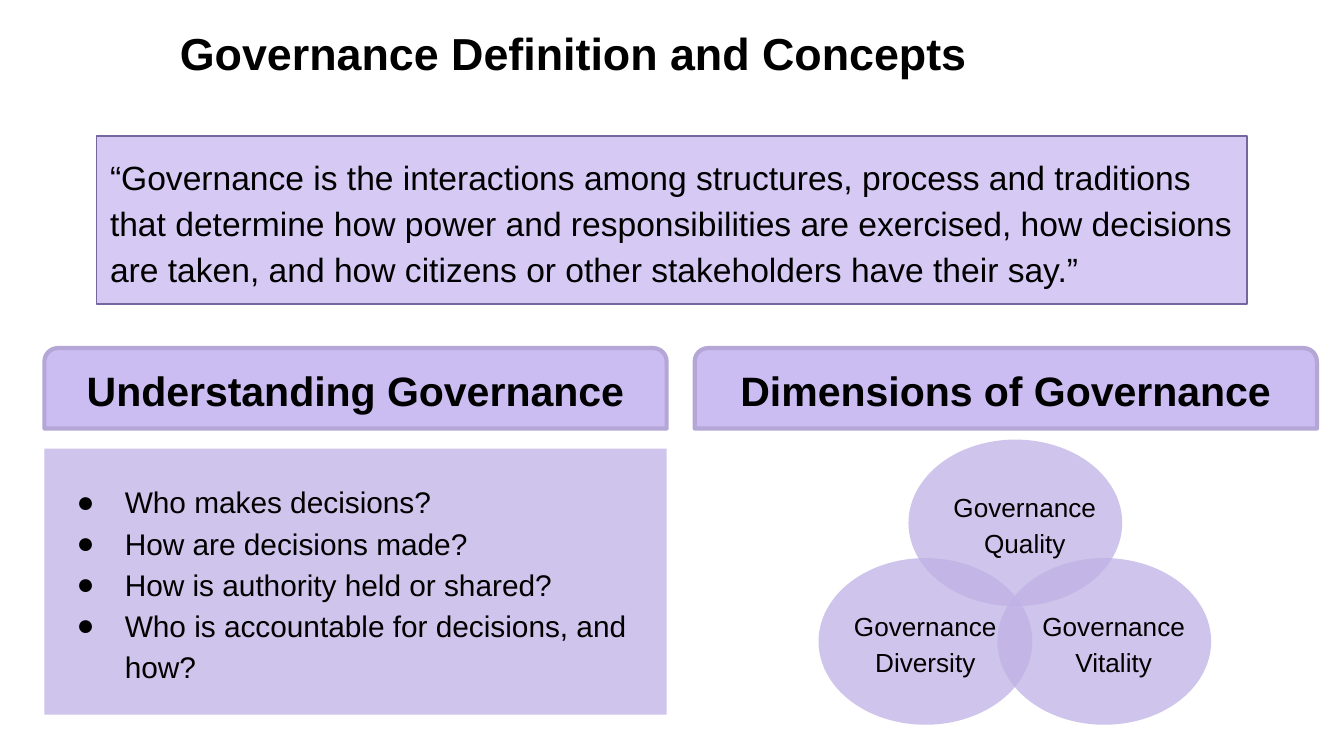
from lxml.etree import SubElement
from pptx import Presentation
from pptx.dml.color import RGBColor
from pptx.enum.shapes import MSO_SHAPE as Shape
from pptx.enum.text import MSO_ANCHOR as Anchor, PP_ALIGN as Align
from pptx.oxml.ns import qn
from pptx.util import Cm, Pt

FONT = "Arial"
BLACK = "000000"
LILAC = "C0B2E5"
MARGIN = 0.84
COLUMN_WIDTH = 11.76
RIGHT_COLUMN = 13.13
QUESTIONS = [
    "Who makes decisions?",
    "How are decisions made?",
    "How is authority held or shared?",
    "Who is accountable for decisions, and how?",
]
# left, top, text, left indent of the text
DIMENSIONS = [
    (17.17, 8.31, "Governance\vQuality", 0.36),
    (18.85, 10.55, "Governance\vVitality", 0.36),
    (15.47, 10.55, "Governance\vDiversity", 0),
]


def color(hex_string):
    return RGBColor.from_string(hex_string)


def paint(shape, fill, opacity=100, line=None, line_width=0):
    shape.shadow.inherit = False
    shape.fill.solid()
    shape.fill.fore_color.rgb = color(fill)
    if opacity < 100:
        tint = shape.fill._xPr.find(qn("a:solidFill"))[0]
        SubElement(tint, qn("a:alpha"), val=str(opacity * 1000))
    if line:
        shape.line.color.rgb = color(line)
        shape.line.width = Pt(line_width)
    else:
        shape.line.fill.background()


def write(shape, lines, size, bold=False, align=Align.LEFT, spacing=1.0,
          wrap=True, indent=0, hanging=0, bullet=None):
    """Fill the shape with one paragraph per line."""
    frame = shape.text_frame
    frame.word_wrap = wrap
    frame.vertical_anchor = Anchor.MIDDLE
    frame.margin_left = frame.margin_right = Cm(0.25)
    frame.margin_top = frame.margin_bottom = Cm(0.25)
    for number, line in enumerate(lines):
        para = frame.add_paragraph() if number else frame.paragraphs[0]
        para.text = line
        para.alignment = align
        para.line_spacing = spacing
        props = para._p.get_or_add_pPr()
        if indent:
            props.set("marL", str(Cm(indent)))
            props.set("indent", str(-Cm(hanging)))
        if bullet:
            tint = SubElement(props, qn("a:buClr"))
            SubElement(tint, qn("a:srgbClr"), val=BLACK)
            SubElement(props, qn("a:buFont"), typeface=FONT)
            SubElement(props, qn("a:buChar"), char=bullet)
        for span in para.runs:
            span.font.name = FONT
            span.font.size = Pt(size)
            span.font.bold = bold
            span.font.color.rgb = color(BLACK)


def add_block(page, kind, left, top, width, height):
    return page.shapes.add_shape(kind, Cm(left), Cm(top), Cm(width), Cm(height))


def add_title(page, text):
    box = page.shapes.add_textbox(Cm(3.15), Cm(0.36), Cm(22.35), Cm(1.27))
    paint(box, "FFFFFF", 55)
    write(box, [text], 24, bold=True)


def add_quote(page, text):
    box = add_block(page, Shape.RECTANGLE, 1.83, 2.57, 21.74, 3.18)
    paint(box, "CCBDF3", 80, "75679D", 0.75)
    write(box, [text], 18, spacing=1.15)


def add_heading(page, left, text):
    tab = add_block(page, Shape.ROUND_2_SAME_RECTANGLE,
                    left, 6.58, COLUMN_WIDTH, 1.52)
    paint(tab, "CBBCF2", line="B4A7D6", line_width=2.25)
    write(tab, [text], 22, bold=True, align=Align.CENTER)


def add_questions(page):
    box = add_block(page, Shape.RECTANGLE, MARGIN, 8.48, COLUMN_WIDTH, 5.03)
    paint(box, LILAC, 76)
    write(box, QUESTIONS, 16, spacing=1.15, indent=1.27, hanging=0.91, bullet="●")


def add_dimension(page, left, top, text, indent):
    oval = add_block(page, Shape.OVAL, left, top, 4.04, 3.15)
    paint(oval, LILAC, 76)
    write(oval, [text], 14, align=Align.CENTER, spacing=1.15,
          wrap=False, indent=indent)


def main():
    deck = Presentation()
    deck.slide_width, deck.slide_height = Cm(25.4), Cm(14.29)
    page = deck.slides.add_slide(deck.slide_layouts[6])
    add_questions(page)
    add_heading(page, MARGIN, "Understanding Governance")
    add_quote(page, "“Governance is the interactions among structures, process "
                    "and traditions that determine how power and "
                    "responsibilities are exercised, how decisions are taken, "
                    "and how citizens or other stakeholders have their say.”")
    add_heading(page, RIGHT_COLUMN, "Dimensions of Governance")
    for dimension in DIMENSIONS:
        add_dimension(page, *dimension)
    add_title(page, "Governance Definition and Concepts")
    deck.save("out.pptx")


if __name__ == "__main__":
    main()
